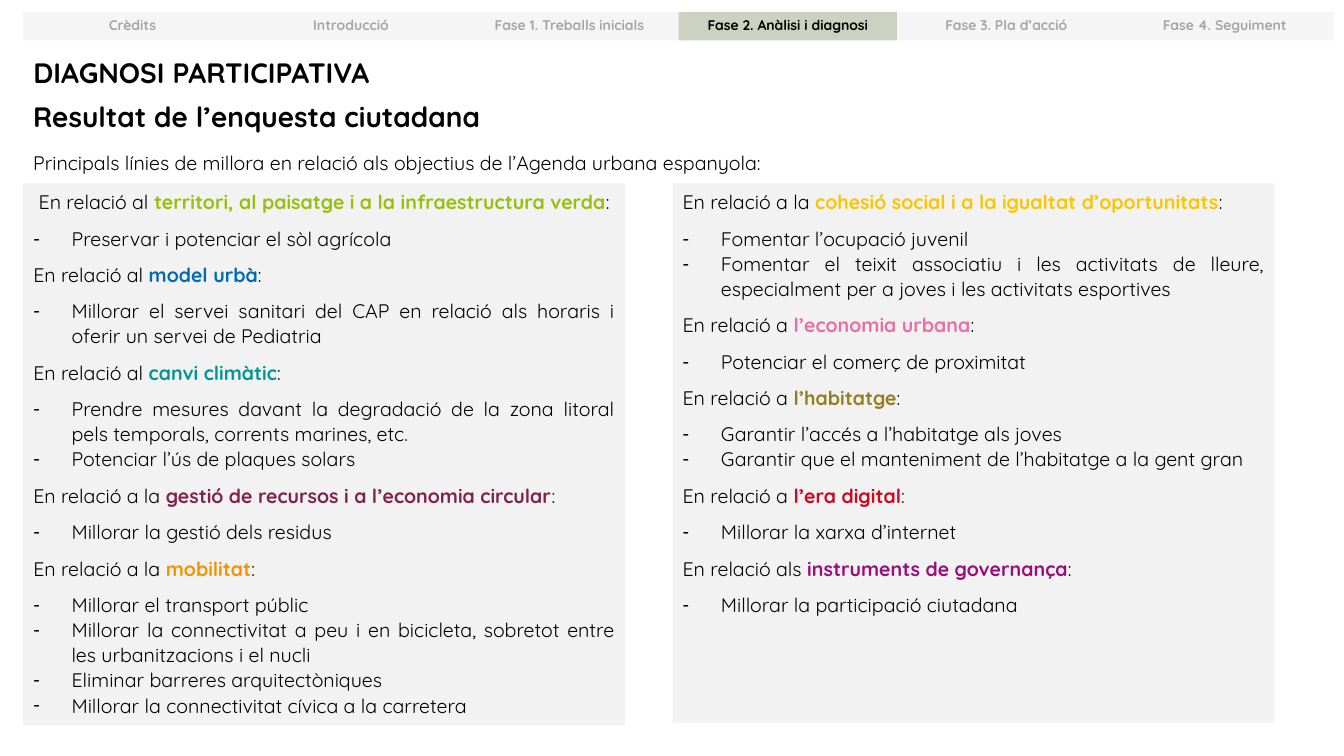
from lxml import etree
from pptx import Presentation
from pptx.dml.color import RGBColor
from pptx.enum.shapes import MSO_SHAPE
from pptx.enum.text import MSO_ANCHOR, MSO_AUTO_SIZE, PP_ALIGN
from pptx.oxml.ns import qn
from pptx.util import Inches, Pt

RECTANGLE = MSO_SHAPE.RECTANGLE
TOP, MIDDLE = MSO_ANCHOR.TOP, MSO_ANCHOR.MIDDLE
NO_AUTOFIT = MSO_AUTO_SIZE.NONE
LEFT, CENTER, JUSTIFY = PP_ALIGN.LEFT, PP_ALIGN.CENTER, PP_ALIGN.JUSTIFY

FONT = "Quicksand"
LINE_SPACING = 1.07
BODY_SIZE = 14
HANGING = Inches(0.38)
COLORS = {
    "text": "000000", "panel": "F2F2F2",
    "tab": "D9D9D9", "tab_text": "A6A6A6", "active_tab": "374E0A",
    "territory": "97BF0D", "urban_model": "006AB3", "climate": "009793",
    "resources": "80234A", "mobility": "F29400", "cohesion": "FDC400",
    "economy": "EA6EA3", "housing": "967C21", "digital": "CC071E",
    "governance": "990D7D",
}

PHASES = ["Crèdits", "Introducció", "Fase 1. Treballs inicials",
          "Fase 2. Anàlisi i diagnosi", "Fase 3. Pla d’acció", "Fase 4. Seguiment"]
ACTIVE_PHASE = 3

# Each topic: lead-in, highlighted name, colour key, proposals
LEFT_TOPICS = [
    (" En relació al ", "territori, al paisatge i a la infraestructura verda", "territory",
     ["Preservar i potenciar el sòl agrícola"]),
    ("En relació al ", "model urbà", "urban_model",
     ["Millorar el servei sanitari del CAP en relació als horaris i oferir un servei de Pediatria"]),
    ("En relació al ", "canvi climàtic", "climate",
     ["Prendre mesures davant la degradació de la zona litoral pels temporals, "
      "corrents marines, etc.",
      "Potenciar l’ús de plaques solars"]),
    ("En relació a la ", "gestió de recursos i a l’economia circular", "resources",
     ["Millorar la gestió dels residus"]),
    ("En relació a la ", "mobilitat", "mobility",
     ["Millorar el transport públic",
      "Millorar la connectivitat a peu i en bicicleta, sobretot entre "
      "les urbanitzacions i el nucli",
      "Eliminar barreres arquitectòniques",
      "Millorar la connectivitat cívica a la carretera"]),
]
RIGHT_TOPICS = [
    ("En relació a la ", "cohesió social i a la igualtat d’oportunitats", "cohesion",
     ["Fomentar l’ocupació juvenil",
      "Fomentar el teixit associatiu i les activitats de lleure, "
      "especialment per a joves i les activitats esportives"]),
    ("En relació a ", "l’economia urbana", "economy",
     ["Potenciar el comerç de proximitat"]),
    ("En relació a ", "l’habitatge", "housing",
     ["Garantir l’accés a l’habitatge als joves",
      "Garantir que el manteniment de l’habitatge a la gent gran"]),
    ("En relació a ", "l’era digital", "digital",
     ["Millorar la xarxa d’internet"]),
    ("En relació als ", "instruments de governança", "governance",
     ["Millorar la participació ciutadana"]),
]


def rgb(key):
    return RGBColor.from_string(COLORS[key])


def add_run(paragraph, text, size, color="text", bold=False):
    run = paragraph.add_run()
    run.text = text
    run.font.name = FONT
    run.font.size = Pt(size)
    run.font.bold = bold
    run.font.color.rgb = rgb(color)


def place(shape, left, top, width, height):
    shape.left, shape.top = Inches(left), Inches(top)
    shape.width, shape.height = Inches(width), Inches(height)


def prepare_frame(shape, anchor=TOP):
    frame = shape.text_frame
    frame.word_wrap = True
    frame.auto_size = NO_AUTOFIT
    frame.vertical_anchor = anchor
    return frame


def format_paragraph(paragraph, align, line_spacing, before=0, after=0):
    paragraph.alignment = align
    paragraph.line_spacing = line_spacing
    paragraph.space_before = Pt(before)
    paragraph.space_after = Pt(after)


def set_bullet(paragraph, mark=None):
    """Hang the paragraph on the given mark, or clear its bullet and indent."""
    properties = paragraph._p.get_or_add_pPr()
    indent = HANGING if mark else 0
    properties.set("marL", str(indent))
    properties.set("indent", str(-indent))
    if mark:
        etree.SubElement(properties, qn("a:buChar")).set("char", mark)
    else:
        etree.SubElement(properties, qn("a:buNone"))


def add_phase_bar(slide, left, top, width, height):
    tab_width = width / len(PHASES)
    for i, phase in enumerate(PHASES):
        active = i == ACTIVE_PHASE
        tab = slide.shapes.add_shape(RECTANGLE, Inches(left + i * tab_width), Inches(top),
                                     Inches(tab_width), Inches(height))
        tab.shadow.inherit = False
        tab.line.fill.background()
        tab.fill.solid()
        tab.fill.fore_color.rgb = rgb("active_tab" if active else "tab")
        tint = tab._element.spPr.find(qn("a:solidFill"))[0]
        etree.SubElement(tint, qn("a:alpha")).set("val", "25000")
        label = prepare_frame(tab, MIDDLE).paragraphs[0]
        format_paragraph(label, CENTER, 0.9, before=10)
        add_run(label, phase, 10, "text" if active else "tab_text", bold=True)


def add_line(shape, box, text, size, bold=False, line_spacing=1.0):
    place(shape, *box)
    paragraph = prepare_frame(shape).paragraphs[0]
    format_paragraph(paragraph, LEFT, line_spacing)
    add_run(paragraph, text, size, bold=bold)


def add_headings(slide, left, top, width):
    subtitle, introduction = (slide.shapes.add_textbox(0, 0, 0, 0) for _ in range(2))
    add_line(slide.shapes.title, (left, top, width, 0.44),
             "DIAGNOSI PARTICIPATIVA", 20, bold=True)
    add_line(subtitle, (left, top + 0.44, width, 0.44),
             "Resultat de l’enquesta ciutadana", 20, bold=True)
    add_line(introduction, (left, top + 0.93, width, 0.33),
             "Principals línies de millora en relació als objectius de l’Agenda urbana espanyola:",
             BODY_SIZE, line_spacing=LINE_SPACING)


def fill_topic_panel(panel, box, topics):
    place(panel, *box)
    panel.fill.solid()
    panel.fill.fore_color.rgb = rgb("panel")
    frame = prepare_frame(panel)
    for i, (lead, name, color, proposals) in enumerate(topics):
        heading = frame.add_paragraph() if i else frame.paragraphs[0]
        format_paragraph(heading, JUSTIFY, LINE_SPACING, after=8)
        set_bullet(heading)
        add_run(heading, lead, BODY_SIZE)
        add_run(heading, name, BODY_SIZE, color, bold=True)
        add_run(heading, ":", BODY_SIZE)
        for number, proposal in enumerate(proposals, 1):
            item = frame.add_paragraph()
            format_paragraph(item, JUSTIFY, LINE_SPACING,
                             after=8 if number == len(proposals) else 0)
            set_bullet(item, "-")
            add_run(item, proposal, BODY_SIZE)


def main():
    presentation = Presentation()
    presentation.slide_width, presentation.slide_height = Inches(13.33), Inches(7.5)
    two_content = presentation.slide_layouts[3]
    slide = presentation.slides.add_slide(two_content)
    add_phase_bar(slide, 0.23, 0.12, 13, 0.28)
    add_headings(slide, 0.23, 0.5, 12.41)
    fill_topic_panel(slide.placeholders[1], (0.23, 1.82, 5.97, 5.38), LEFT_TOPICS)
    fill_topic_panel(slide.placeholders[2], (6.67, 1.82, 5.97, 5.35), RIGHT_TOPICS)
    presentation.save("out.pptx")


if __name__ == "__main__":
    main()
